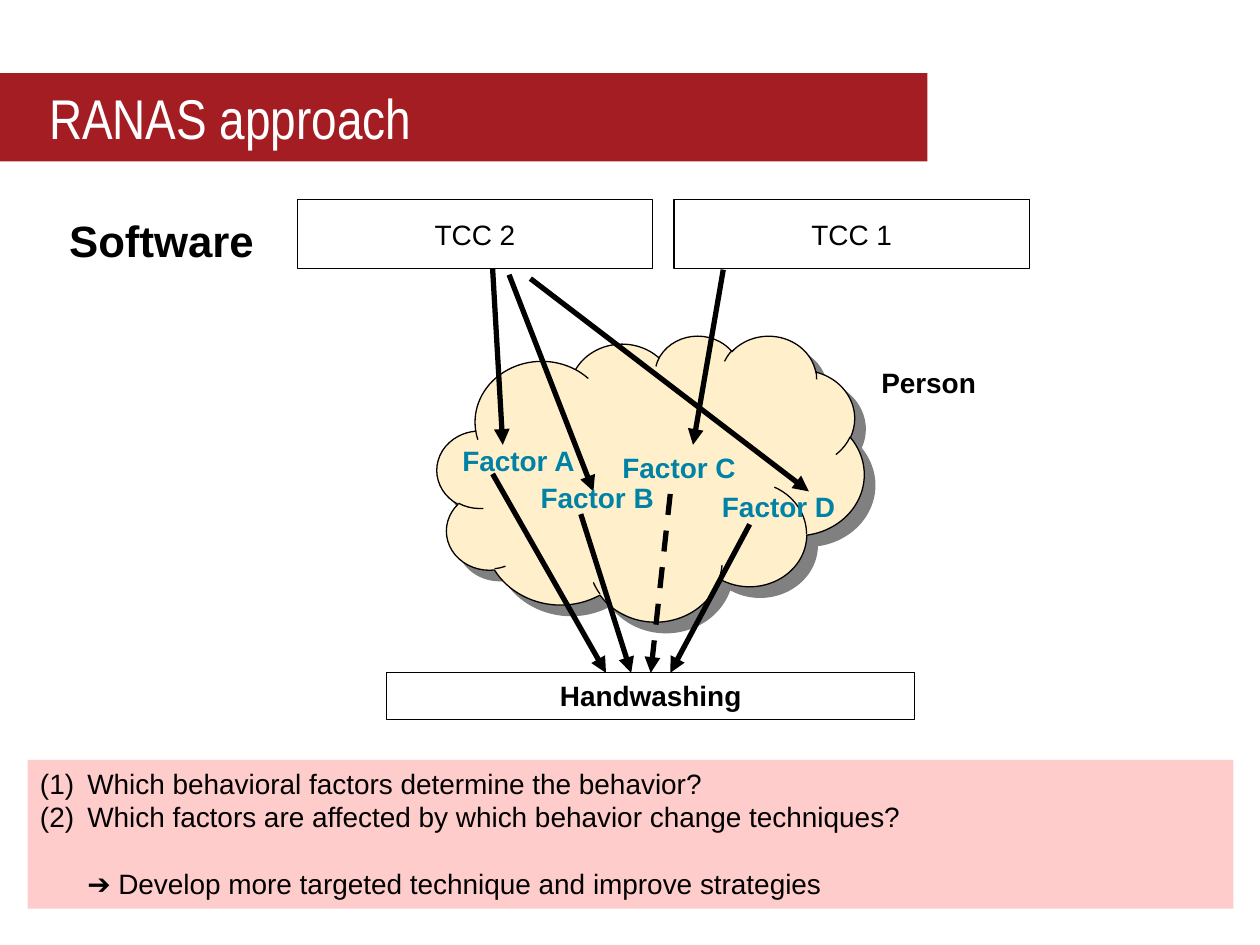
from dataclasses import dataclass

from lxml import etree
from pptx import Presentation
from pptx.dml.color import RGBColor
from pptx.enum.dml import MSO_LINE
from pptx.enum.shapes import MSO_CONNECTOR, MSO_SHAPE
from pptx.enum.text import MSO_ANCHOR, MSO_AUTO_SIZE, PP_ALIGN
from pptx.oxml.ns import qn
from pptx.util import Pt

RECTANGLE, CLOUD = MSO_SHAPE.RECTANGLE, MSO_SHAPE.CLOUD
STRAIGHT, DASH = MSO_CONNECTOR.STRAIGHT, MSO_LINE.DASH
LEFT, CENTER, RIGHT = PP_ALIGN.LEFT, PP_ALIGN.CENTER, PP_ALIGN.RIGHT
TOP, MIDDLE = MSO_ANCHOR.TOP, MSO_ANCHOR.MIDDLE
TOP_SIDE = 0


@dataclass(frozen=True)
class Theme:
    ink: str = "000000"
    paper: str = "FFFFFF"
    banner: str = "A31D23"
    cloud: str = "FFF0CB"
    shadow: str = "808080"
    factor: str = "0082A6"
    panel: str = "FFCCCC"
    font: str = "Arial"
    title_font: str = "Arial Narrow"
    title: float = 32
    heading: float = 25
    body: float = 16
    outline: float = 0.75
    arrow: float = 3


THEME = Theme()


def within(region, left, top, width, height):
    return region[0] + left, region[1] + top, width, height


def style_font(font, size=THEME.body, color=THEME.ink, bold=False, name=THEME.font):
    font.size = Pt(size)
    font.name = name
    font.bold = bold
    font.color.rgb = RGBColor.from_string(color)


def add_block(page, box, kind=RECTANGLE, fill=None, line=None):
    block = page.shapes.add_shape(kind, *map(Pt, box))
    block.shadow.inherit = False
    if fill:
        block.fill.solid()
        block.fill.fore_color.rgb = RGBColor.from_string(fill)
    else:
        block.fill.background()
    if line:
        block.line.color.rgb = RGBColor.from_string(line)
        block.line.width = Pt(THEME.outline)
    else:
        block.line.fill.background()
    return block


def write(shape, text, align=CENTER, anchor=MIDDLE, **font):
    frame = shape.text_frame
    frame.text = text
    frame.word_wrap = True
    frame.vertical_anchor = anchor
    for para in frame.paragraphs:
        para.alignment = align
        for span in para.runs:
            style_font(span.font, **font)
    return frame


def add_label(page, box, text, align, **font):
    label = page.shapes.add_textbox(*map(Pt, box))
    frame = write(label, text, align, TOP, bold=True, **font)
    frame.word_wrap = False
    frame.auto_size = MSO_AUTO_SIZE.SHAPE_TO_FIT_TEXT


def add_arrow(page, region, start, end):
    points = [region[0] + start[0], region[1] + start[1], region[0] + end[0], region[1] + end[1]]
    arrow = page.shapes.add_connector(STRAIGHT, *map(Pt, points))
    arrow.line.color.rgb = RGBColor.from_string(THEME.ink)
    arrow.line.width = Pt(THEME.arrow)
    etree.SubElement(arrow.line._get_or_add_ln(), qn("a:tailEnd"), type="triangle")
    etree.SubElement(arrow._element.spPr, qn("a:effectLst"))
    return arrow


def add_cloud(page, box):
    cloud = add_block(page, box, CLOUD, THEME.cloud, THEME.ink)
    effects = cloud._element.spPr.find(qn("a:effectLst"))
    shadow = etree.SubElement(
        effects, qn("a:outerShdw"), dist=str(Pt(8.5)), dir="2700000", algn="ctr", rotWithShape="0"
    )
    etree.SubElement(shadow, qn("a:srgbClr"), val=THEME.shadow)


def add_banner(page, box):
    banner = add_block(page, box, fill=THEME.banner)
    frame = write(banner, "RANAS approach", LEFT, size=THEME.title,
                  color=THEME.paper, name=THEME.title_font)
    frame.margin_left = frame.margin_right = Pt(28)


def add_diagram(page, region):
    target_top = 270.7
    target = add_block(page, within(region, 51.1, target_top, 301.7, 26.6), line=THEME.ink)
    write(target, "Handwashing", anchor=TOP, bold=True)
    add_cloud(page, within(region, 79.9, 77.8, 244, 163.4))

    technique_arrows = [
        ((111.6, 39.6), (117.4, 140.4)),
        ((121, 43.2), (169.2, 167)),
        ((133.2, 45.4), (292.3, 167)),
        ((243.4, 40.3), (226.1, 140.4)),
    ]
    for start, end in technique_arrows:
        add_arrow(page, region, start, end)

    factors = [("A", 85.7, 136.1), ("B", 131, 157), ("C", 177.8, 140.4), ("D", 234.7, 162.7)]
    for letter, left, top in factors:
        add_label(page, within(region, left, top, 79.8, 26.6), f"Factor {letter}", RIGHT,
                  color=THEME.factor)

    behavior_arrows = [
        ((258.5, 185.8), 213.1),
        ((162, 180), 190.8),
        ((111.6, 157), 176.4),
    ]
    for start, end_left in behavior_arrows:
        add_arrow(page, region, start, (end_left, target_top))
    weak_arrow = add_arrow(page, region, (213.1, 168.5), (202, target_top))
    weak_arrow.line.dash_style = DASH
    weak_arrow.end_connect(target, TOP_SIDE)

    add_label(page, within(region, 326.2, 91.4, 69.1, 26.6), "Person", CENTER)
    for text, left in (("TCC 2", 0), ("TCC 1", 215.3)):
        write(add_block(page, within(region, left, 0, 203, 39.6), line=THEME.ink), text)


def add_questions(page, box):
    panel = add_block(page, box, fill=THEME.panel)
    lines = [
        "Which behavioral factors determine the behavior?",
        "Which factors are affected by which behavior change techniques?",
        "➔ Develop more targeted technique and improve strategies",
    ]
    frame = write(panel, "\n".join(lines), LEFT, TOP)
    *questions, conclusion = frame.paragraphs
    indent = Pt(27)
    for para in frame.paragraphs:
        para._p.get_or_add_pPr().set("marL", str(indent))
    for para in questions:
        settings = para._p.get_or_add_pPr()
        settings.set("indent", str(-indent))
        etree.SubElement(settings, qn("a:buFont"), typeface=THEME.font)
        etree.SubElement(settings, qn("a:buAutoNum"), type="arabicParenBoth")
    conclusion.space_before = Pt(19)


def main():
    deck = Presentation()
    deck.slide_width, deck.slide_height = Pt(720), Pt(540)
    page = deck.slides.add_slide(deck.slide_layouts[6])
    add_diagram(page, (169.9, 113.8, 418.3, 297.3))
    add_banner(page, (0, 41.8, 530, 50.4))
    add_label(page, (31, 118.8, 121, 37.4), "Software", RIGHT, size=THEME.heading)
    add_questions(page, (15.8, 434.2, 689, 85))
    deck.save("out.pptx")


if __name__ == "__main__":
    main()
